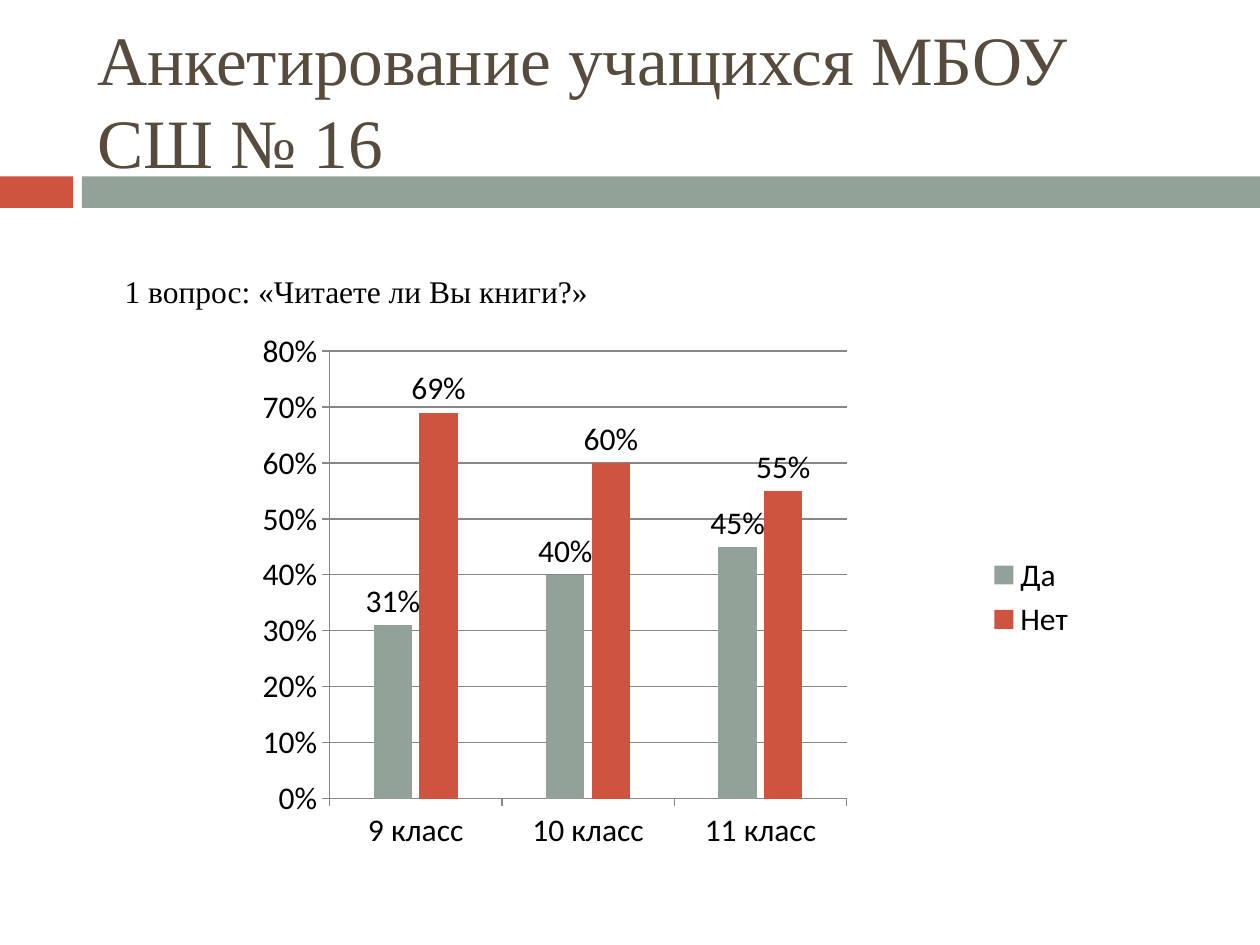
from lxml import etree
from pptx import Presentation
from pptx import util as u
from pptx.chart.data import CategoryChartData
from pptx.dml.color import RGBColor
from pptx.enum import chart as ch, shapes, text
from pptx.oxml.ns import qn

HUES = {"sage": "93A299", "red": "CF543F", "brown": "564B3C", "black": "000000", "gray": "868686"}
SERIF = "Times New Roman"

deck = Presentation()
deck.slide_width, deck.slide_height = u.Inches(10), u.Inches(7.5)
page = deck.slides.add_slide(deck.slide_layouts[5])


def hue(name):
    return RGBColor.from_string(HUES[name])


def style(font, size, face, name):
    font.size, font.name = u.Pt(size), face
    font.color.rgb = hue(name)


for left, wide, name in ((0, 0.58, "red"), (0.65, 9.35, "sage")):
    band = page.shapes.add_shape(shapes.MSO_SHAPE.RECTANGLE, u.Inches(left), u.Inches(1.4), u.Inches(wide), u.Inches(0.25))
    band.shadow.inherit = False
    band.fill.solid()
    band.fill.fore_color.rgb = hue(name)
    band.line.fill.background()

title = page.shapes.title
title.left, title.top, title.width, title.height = map(u.Inches, (0.67, 0.25, 8.92, 1.08))
title.text_frame.text = "Анкетирование учащихся МБОУ СШ № 16"
title.text_frame.word_wrap = True
title.text_frame.auto_size = text.MSO_AUTO_SIZE.NONE
title.text_frame.vertical_anchor = text.MSO_ANCHOR.MIDDLE
line = title.text_frame.paragraphs[0]
line.alignment = text.PP_ALIGN.LEFT
style(line.runs[0].font, 39.6, SERIF, "brown")

query = page.shapes.add_textbox(*map(u.Inches, (0.89, 2.11, 4.73, 0.4))).text_frame
query.word_wrap = True
query.text = "1 вопрос: «Читаете ли Вы книги?»"
style(query.paragraphs[0].runs[0].font, 18, SERIF, "black")

data = CategoryChartData(number_format="0%")
data.categories = ["9 класс", "10 класс", "11 класс"]
data.add_series("Да", (0.31, 0.4, 0.45))
data.add_series("Нет", (0.69, 0.6, 0.55))
chart = page.shapes.add_chart(ch.XL_CHART_TYPE.COLUMN_CLUSTERED, *map(u.Inches, (2.02, 2.52, 6.62, 4.44)), data).chart
style(chart.font, 18, "Calibri", "black")
chart.has_title = False
chart.has_legend = True
chart.legend.position = ch.XL_LEGEND_POSITION.RIGHT
chart.legend.include_in_layout = False

plot = chart.plots[0]
plot.gap_width, plot.overlap, plot.vary_by_categories = 230, -19, False
for row, name in zip(plot.series, ("sage", "red")):
    row.format.fill.solid()
    row.format.fill.fore_color.rgb = hue(name)
    tags = row.data_labels
    tags.show_value = True
    tags.number_format, tags.number_format_is_linked = "0%", False
    tags.position = ch.XL_LABEL_POSITION.OUTSIDE_END

rise = chart.value_axis
rise.minimum_scale, rise.maximum_scale, rise.major_unit = 0, 0.8, 0.1
rise.tick_labels.number_format, rise.tick_labels.number_format_is_linked = "0%", False
rise.has_major_gridlines = True
for axis in (rise, chart.category_axis):
    axis.major_tick_mark = ch.XL_TICK_MARK.OUTSIDE
for part in (rise, chart.category_axis, rise.major_gridlines):
    part.format.line.color.rgb = hue("gray")
    part.format.line.width = u.Pt(0.75)

area = plot._element.getparent()
for old in area.findall(qn("c:layout")):
    area.remove(old)
frame = etree.Element(qn("c:layout"))
area.insert(0, frame)
spot = etree.SubElement(frame, qn("c:manualLayout"))
for key, val in (("layoutTarget", "inner"), ("xMode", "edge"), ("yMode", "edge"),
                 ("x", 0.09), ("y", 0.06), ("w", 0.62), ("h", 0.8)):
    etree.SubElement(spot, qn(f"c:{key}"), val=str(val))

deck.save("out.pptx")
